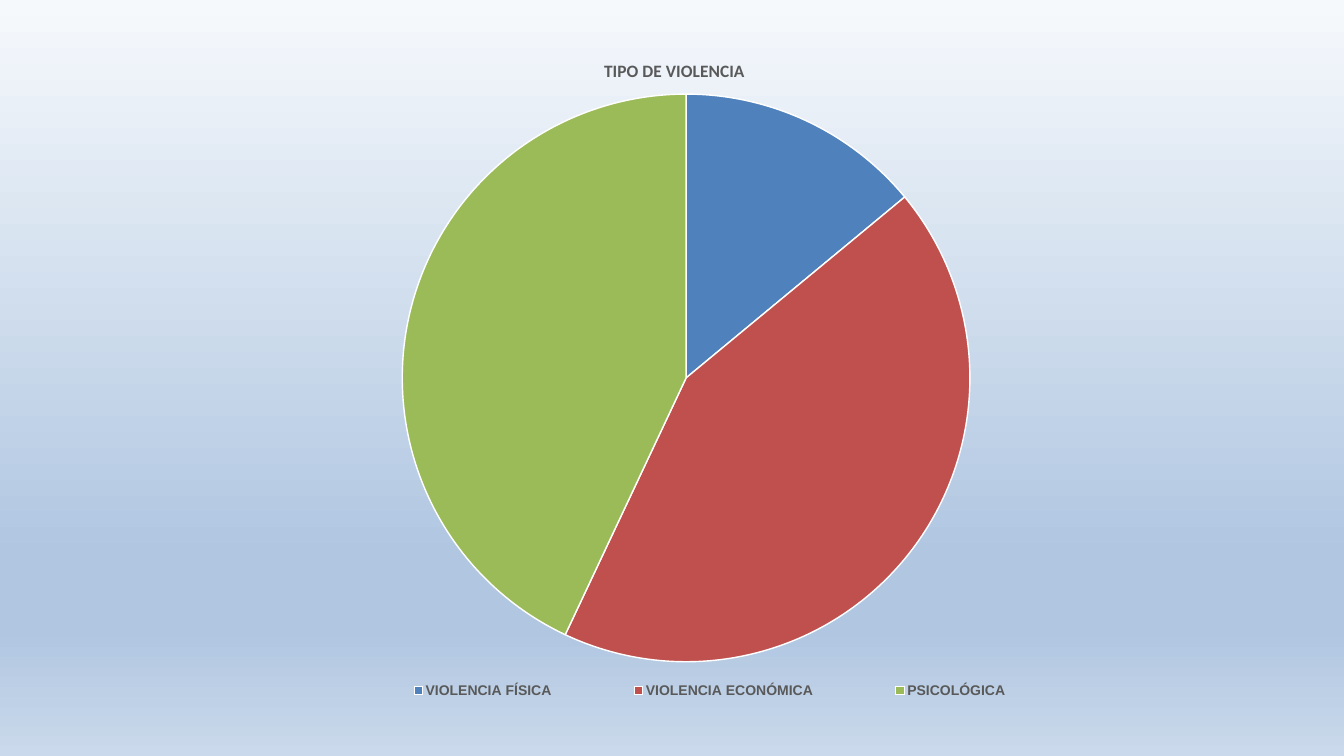
from typing import NamedTuple

from lxml import etree
from pptx import Presentation
from pptx.chart.chart import Chart
from pptx.chart.data import CategoryChartData
from pptx.dml.color import RGBColor
from pptx.enum.chart import XL_CHART_TYPE as ChartType, XL_LEGEND_POSITION as LegendPosition
from pptx.oxml import parse_xml
from pptx.oxml.ns import nsdecls, qn
from pptx.slide import Slide
from pptx.util import Inches, Pt

WHITE = RGBColor(0xFF, 0xFF, 0xFF)
BLACK = RGBColor(0x00, 0x00, 0x00)
GRAY = RGBColor(0x59, 0x59, 0x59)
BLUE = RGBColor(0x4F, 0x81, 0xBD)
RED = RGBColor(0xC0, 0x50, 0x4D)
GREEN = RGBColor(0x9B, 0xBB, 0x59)


class Stop(NamedTuple):
    percent: int
    color: RGBColor


class Slice(NamedTuple):
    label: str
    value: int
    color: RGBColor


BACKGROUND = [
    Stop(0, RGBColor(0xF6, 0xF9, 0xFC)),
    Stop(74, RGBColor(0xB0, 0xC6, 0xE1)),
    Stop(83, RGBColor(0xB0, 0xC6, 0xE1)),
    Stop(100, RGBColor(0xCA, 0xD9, 0xEB)),
]
SLICES = [
    Slice("VIOLENCIA FÍSICA", 14, BLUE),
    Slice("VIOLENCIA ECONÓMICA", 43, RED),
    Slice("PSICOLÓGICA", 43, GREEN),
]
CHART_FONT = {"name": "Calibri", "size": Pt(10)}
TITLE_FONT = {"name": "Calibri", "size": Pt(18.6), "bold": True}
LEGEND_FONT = {"name": "Arial", "size": Pt(15), "bold": True}


def set_font(font, values: dict, color: RGBColor) -> None:
    for name, value in values.items():
        setattr(font, name, value)
    font.color.rgb = color


def paint_background(slide: Slide, stops: list[Stop]) -> None:
    """Fill the slide with a gradient that runs from top to bottom."""
    fill = slide.background.fill
    fill.gradient()
    fill.gradient_angle = 270
    stop_list = next(slide.element.iter(qn("a:gsLst")))
    for old_stop in list(stop_list):
        stop_list.remove(old_stop)
    for stop in stops:
        element = etree.SubElement(stop_list, qn("a:gs"), pos=str(stop.percent * 1000))
        etree.SubElement(element, qn("a:srgbClr"), val=str(stop.color))


def place(element, **fractions: float) -> None:
    """Give a chart part a manual layout in fractions of the chart."""
    layout = element.find(qn("c:layout"))
    if layout is None:
        layout = parse_xml(f"<c:layout {nsdecls('c')}/>")
        before = [qn(tag) for tag in ("c:tx", "c:legendPos")]
        position = sum(child.tag in before for child in element)
        element.insert(position, layout)
    for child in list(layout):
        layout.remove(child)
    manual = etree.SubElement(layout, qn("c:manualLayout"))
    if "target" in fractions:
        etree.SubElement(manual, qn("c:layoutTarget"), val=fractions.pop("target"))
    for axis in ("x", "y"):
        etree.SubElement(manual, qn(f"c:{axis}Mode"), val="edge")
    for name, value in fractions.items():
        etree.SubElement(manual, qn(f"c:{name}"), val=str(value))


def add_pie(slide: Slide, slices: list[Slice]) -> Chart:
    data = CategoryChartData()
    data.categories = [item.label for item in slices]
    data.add_series("Series 1", [item.value for item in slices])
    chart = slide.shapes.add_chart(
        ChartType.PIE, Inches(3.17), Inches(0.62), Inches(14.08), Inches(10.11), data
    ).chart
    set_font(chart.font, CHART_FONT, BLACK)
    plot = chart.plots[0]
    plot.vary_by_categories = True
    for index, item in enumerate(slices):
        point_format = plot.series[0].points[index].format
        point_format.fill.solid()
        point_format.fill.fore_color.rgb = item.color
        point_format.line.color.rgb = WHITE
        point_format.line.width = Pt(1.5)
    return chart


def add_title(chart: Chart, text: str) -> None:
    chart.has_title = True
    frame = chart.chart_title.text_frame
    frame.text = text
    set_font(frame.paragraphs[0].runs[0].font, TITLE_FONT, GRAY)
    chart.chart_title.include_in_layout = False


def add_legend(chart: Chart) -> None:
    chart.has_legend = True
    chart.legend.position = LegendPosition.BOTTOM
    chart.legend.include_in_layout = False
    set_font(chart.legend.font, LEGEND_FONT, GRAY)


def main() -> None:
    presentation = Presentation()
    presentation.slide_width = Inches(20)
    presentation.slide_height = Inches(11.25)
    slide = presentation.slides.add_slide(presentation.slide_layouts[6])
    paint_background(slide, BACKGROUND)

    chart = add_pie(slide, SLICES)
    add_title(chart, "TIPO DE VIOLENCIA")
    add_legend(chart)

    space = chart.element
    chart_part = space.find(qn("c:chart"))
    place(chart_part.find(qn("c:title")), x=0.41, y=0.02)
    place(next(space.iter(qn("c:plotArea"))), target="inner", x=0.2, y=0.05, w=0.6, h=0.89)
    place(chart_part.find(qn("c:legend")), x=0.13, y=0.93, w=0.79, h=0.05)
    chart_part.addnext(parse_xml(
        f"<c:spPr {nsdecls('c', 'a')}><a:noFill/><a:ln><a:noFill/></a:ln></c:spPr>"
    ))

    presentation.save("out.pptx")


if __name__ == "__main__":
    main()
